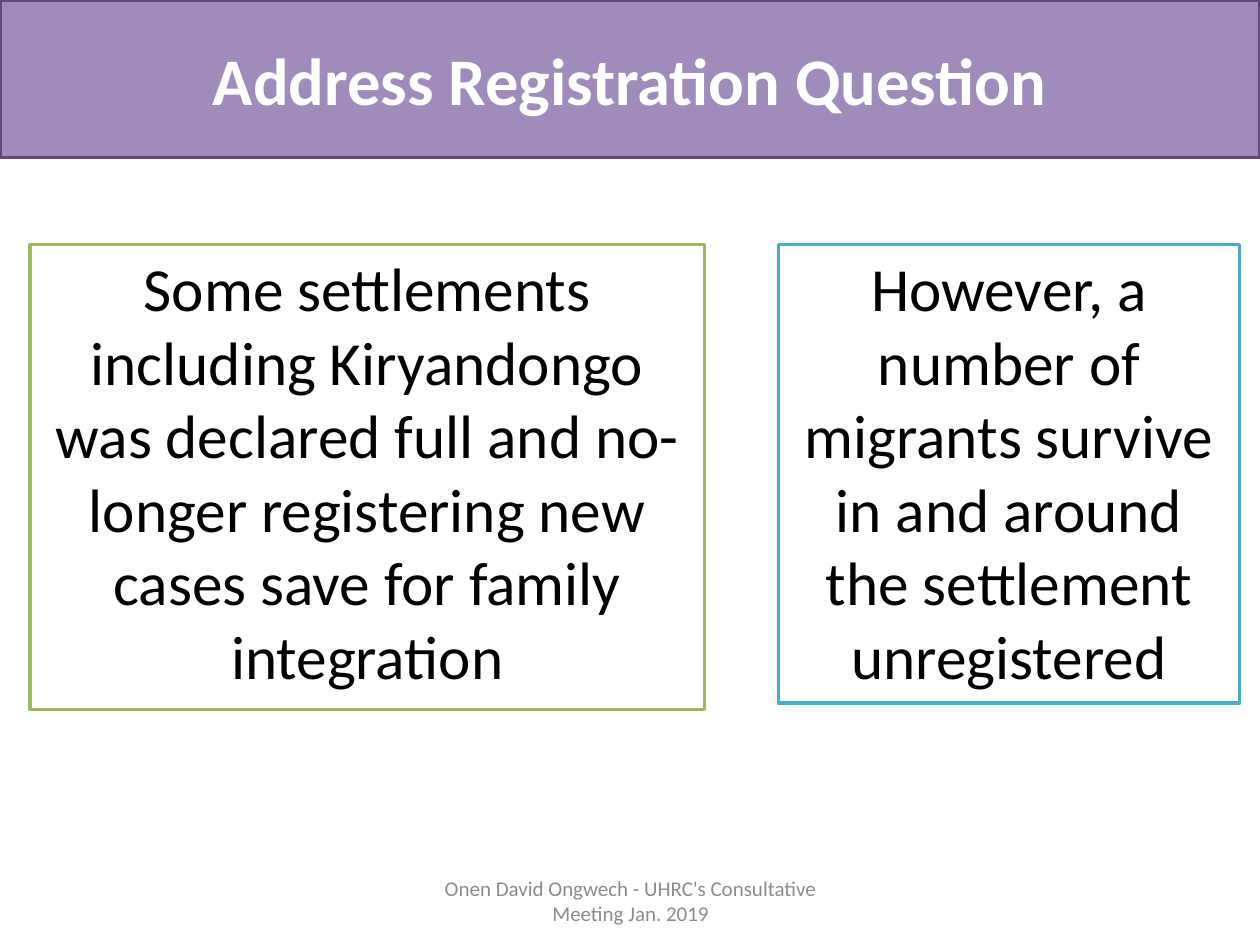
from lxml import etree
from pptx import Presentation
from pptx.dml.color import RGBColor
from pptx.enum import shapes, text
from pptx.oxml.ns import qn
from pptx.util import Inches, Pt

# Content
TITLE = "Address Registration Question"
PANELS = [  # left, width, height, outline, wording
    (0.24, 5.35, 3.69, "9BBB59",
     "Some settlements including Kiryandongo was declared full and "
     "no-longer registering new cases save for family integration"),
    (6.18, 3.66, 3.64, "4BACC6",
     "However, a number of migrants survive in and around the "
     "settlement unregistered"),
]
PANEL_TOP = 1.94
FOOTER = "Onen David Ongwech - UHRC's Consultative Meeting Jan. 2019"


def color(value):
    return RGBColor.from_string(value)


def place(box, left, top, width, height):
    box.left, box.top = Inches(left), Inches(top)
    box.width, box.height = Inches(width), Inches(height)


def paint(box, fill, outline):
    box.fill.solid()
    box.fill.fore_color.rgb = color(fill)
    box.line.color.rgb = color(outline)
    box.line.width = Pt(2)


def write(box, wording, size, ink, anchor, bold=False, before=0):
    frame = box.text_frame
    frame.text = wording
    frame.word_wrap = True
    frame.auto_size = text.MSO_AUTO_SIZE.NONE
    frame.vertical_anchor = anchor
    paragraph = frame.paragraphs[0]
    paragraph.alignment = text.PP_ALIGN.CENTER
    paragraph.space_before = Pt(before)
    font = paragraph.font
    font.name, font.size, font.bold = "Calibri", Pt(size), bold
    font.color.rgb = color(ink)


prs = Presentation()
prs.slide_width, prs.slide_height = Inches(10), Inches(7.5)
slide = prs.slides.add_slide(prs.slide_layouts[5])

# Title band, with a translucent fill
title = slide.shapes.title
place(title, 0, 0, 10, 1.25)
paint(title, "8064A2", "5F4A78")
band_color = title.fill._xPr.find(qn("a:solidFill"))[0]
etree.SubElement(band_color, qn("a:alpha"), val="74000")
write(title, TITLE, 38, "FFFFFF", text.MSO_ANCHOR.MIDDLE, bold=True)

# Outlined panels
for left, width, height, outline, wording in PANELS:
    panel = slide.shapes.add_shape(
        shapes.MSO_SHAPE.RECTANGLE, Inches(left), Inches(PANEL_TOP),
        Inches(width), Inches(height))
    panel.shadow.inherit = False
    paint(panel, "FFFFFF", outline)
    write(panel, wording, 35, "000000", text.MSO_ANCHOR.TOP, before=7)

# Footer
footer = slide.shapes.add_textbox(
    Inches(3.42), Inches(6.95), Inches(3.17), Inches(0.4))
write(footer, FOOTER, 12, "8C8C8C", text.MSO_ANCHOR.MIDDLE)

prs.save("out.pptx")
